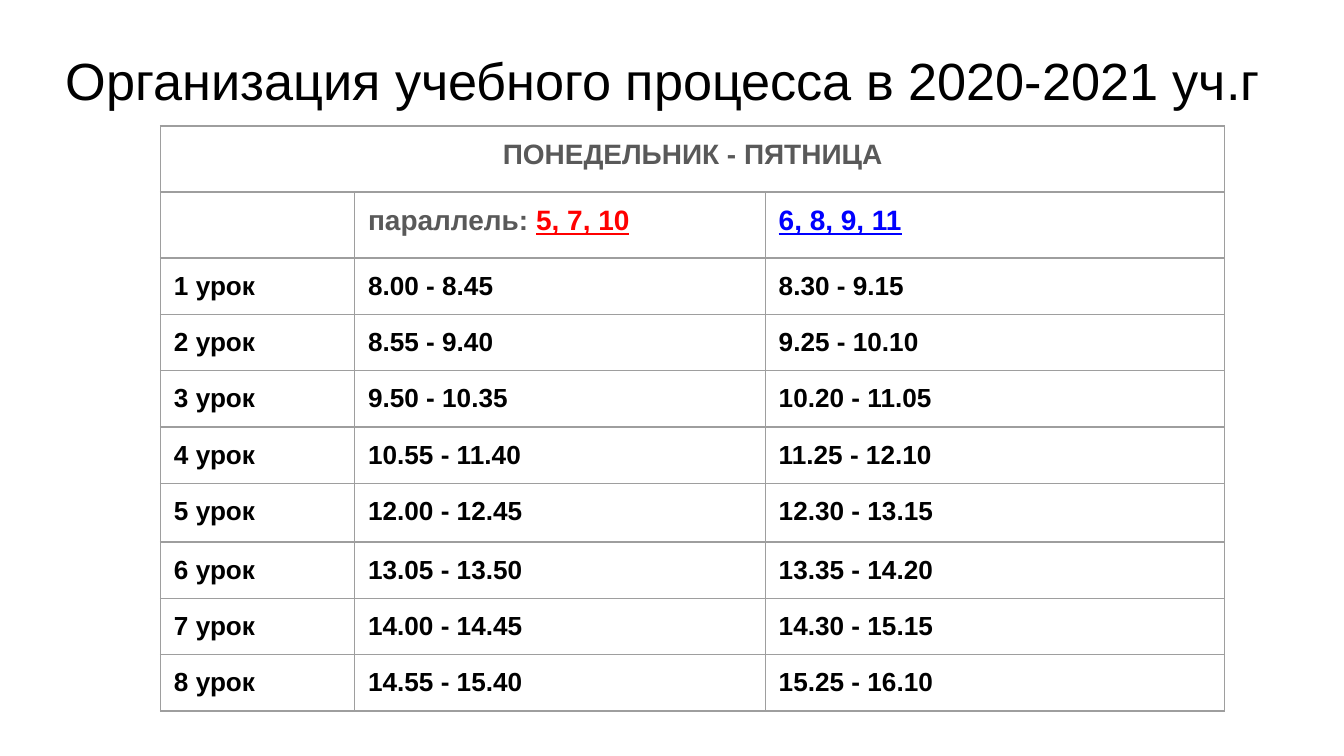
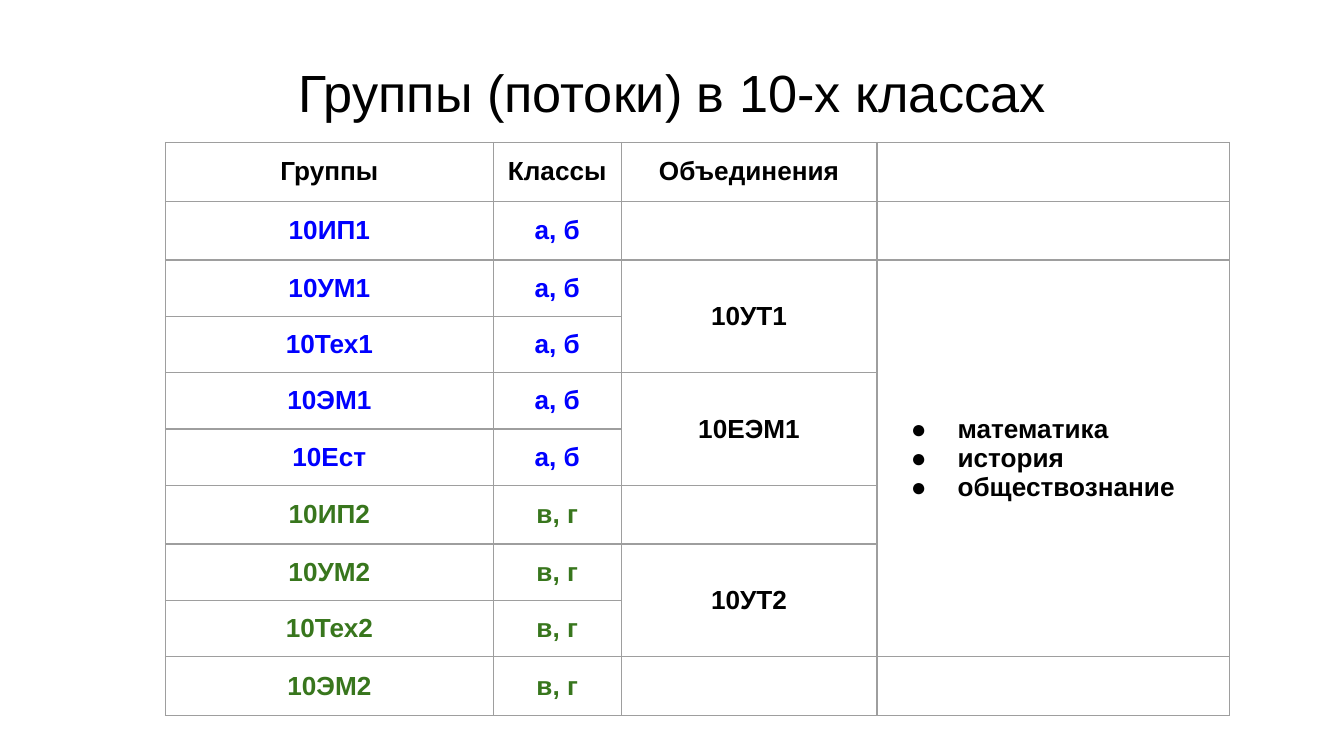
from lxml.etree import SubElement
from pptx import Presentation
from pptx.dml.color import RGBColor
from pptx.enum.text import MSO_ANCHOR as Anchor, MSO_AUTO_SIZE as AutoSize, PP_ALIGN as Align
from pptx.oxml.ns import qn
from pptx.util import Pt

BLACK = RGBColor(0x00, 0x00, 0x00)
GRAY = RGBColor(0x59, 0x59, 0x59)
RED = RGBColor(0xFF, 0x00, 0x00)
BLUE = RGBColor(0x00, 0x00, 0xFF)
GREEN = RGBColor(0x38, 0x76, 0x1D)
BORDER = RGBColor(0x9E, 0x9E, 0x9E)

FONT = "Arial"
INSET = 7.2
ROW_HEIGHT = 30.2
HEAD_HEIGHT = 35.4
TITLE_SIZE = (671, 45.4)
TITLE_FORMAT = {"name": FONT, "size": Pt(28), "bold": False}
CELL_FORMAT = {"name": FONT, "size": Pt(14), "bold": True}
HEAD_FORMAT = {"size": Pt(15)}
LINK_FORMAT = {"size": Pt(15), "underline": True}

LESSONS = [
    ("8.00 - 8.45", "8.30 - 9.15"),
    ("8.55 - 9.40", "9.25 - 10.10"),
    ("9.50 - 10.35", "10.20 - 11.05"),
    ("10.55 - 11.40", "11.25 - 12.10"),
    ("12.00 - 12.45", "12.30 - 13.15"),
    ("13.05 - 13.50", "13.35 - 14.20"),
    ("14.00 - 14.45", "14.30 - 15.15"),
    ("14.55 - 15.40", "15.25 - 16.10"),
]
STREAMS = [
    ("а, б", BLUE, ["10ИП1", "10УМ1", "10Тех1", "10ЭМ1", "10Ест"]),
    ("в, г", GREEN, ["10ИП2", "10УМ2", "10Тех2", "10ЭМ2"]),
]
GROUP_HEADS = ["Группы", "Классы", "Объединения"]
UNIONS = [(2, "10УТ1"), (4, "10ЕЭМ1"), (7, "10УТ2")]
SUBJECTS = ["математика", "история", "обществознание"]
SUBJECT_ROWS = (2, 8)


def apply_format(target, values):
    for name, value in values.items():
        setattr(target, name, value)


def write_span(para, text, color, values):
    span = para.add_run()
    span.text = text
    apply_format(span.font, values)
    span.font.color.rgb = color


def write_cell(cell, text, color=BLACK, align=Align.LEFT, values=None):
    para = cell.text_frame.paragraphs[0]
    para.alignment = align
    write_span(para, text, color, {**CELL_FORMAT, **(values or {})})


def write_bullets(cell, items):
    frame = cell.text_frame
    for index, item in enumerate(items):
        para = frame.add_paragraph() if index else frame.paragraphs[0]
        props = para._p.get_or_add_pPr()
        props.set("marL", str(Pt(36)))
        props.set("indent", str(-Pt(25)))
        bullet_color = SubElement(props, qn("a:buClr"))
        SubElement(bullet_color, qn("a:srgbClr"), val=str(BLACK))
        SubElement(props, qn("a:buFont"), typeface=FONT)
        SubElement(props, qn("a:buChar"), char="●")
        write_span(para, item, BLACK, CELL_FORMAT)


def add_borders(cell):
    props = cell._tc.get_or_add_tcPr()
    for side in ("lnL", "lnR", "lnT", "lnB"):
        line = SubElement(props, qn(f"a:{side}"), w=str(Pt(0.75)))
        fill = SubElement(line, qn("a:solidFill"))
        SubElement(fill, qn("a:srgbClr"), val=str(BORDER))


def add_page(deck, title, left, top, align):
    page = deck.slides.add_slide(deck.slide_layouts[5])
    box = page.shapes.title
    width, height = TITLE_SIZE
    apply_format(box, {"left": Pt(left), "top": Pt(top), "width": Pt(width), "height": Pt(height)})
    margins = {f"margin_{side}": Pt(INSET) for side in ("left", "top", "right", "bottom")}
    apply_format(box.text_frame, {
        **margins, "word_wrap": True, "auto_size": AutoSize.NONE, "vertical_anchor": Anchor.TOP,
    })
    para = box.text_frame.paragraphs[0]
    para.alignment = align
    write_span(para, title, BLACK, TITLE_FORMAT)
    return page


def add_grid(page, left, top, widths, heights, anchor):
    frame = page.shapes.add_table(
        len(heights), len(widths), Pt(left), Pt(top), Pt(sum(widths)), Pt(sum(heights)))
    table = frame.table
    apply_format(table, {"first_row": False, "horz_banding": False})
    for column, width in zip(table.columns, widths):
        column.width = Pt(width)
    for row, height in zip(table.rows, heights):
        row.height = Pt(height)
    margins = {f"margin_{side}": Pt(INSET) for side in ("left", "top", "right", "bottom")}
    for cell in table.iter_cells():
        apply_format(cell, {**margins, "vertical_anchor": anchor})
        add_borders(cell)
        cell.fill.background()
        SubElement(cell.text_frame.paragraphs[0]._p, qn("a:endParaRPr"), sz="1400")
    return table


def build_schedule(deck):
    page = add_page(deck, "Организация учебного процесса в 2020-2021 уч.г", 28, 18.8, Align.LEFT)
    heights = [HEAD_HEIGHT] * 2 + [ROW_HEIGHT] * len(LESSONS)
    heights[6] = 31.4
    table = add_grid(page, 86, 67.5, [104, 220, 246.2], heights, Anchor.TOP)
    table.cell(0, 0).merge(table.cell(0, 2))
    write_cell(table.cell(0, 0), "ПОНЕДЕЛЬНИК - ПЯТНИЦА", GRAY, Align.CENTER, HEAD_FORMAT)
    write_cell(table.cell(1, 1), "параллель: ", GRAY, values=HEAD_FORMAT)
    write_cell(table.cell(1, 1), "5, 7, 10", RED, values=LINK_FORMAT)
    write_cell(table.cell(1, 2), "6, 8, 9, 11", BLUE, values=LINK_FORMAT)
    for number, times in enumerate(LESSONS, 1):
        for column, text in enumerate((f"{number} урок", *times)):
            write_cell(table.cell(number + 1, column), text)


def build_groups(deck):
    page = add_page(deck, "Группы (потоки) в 10-х классах", 24.5, 25.3, Align.CENTER)
    rows = [(group, classes, color) for classes, color, groups in STREAMS for group in groups]
    heights = [ROW_HEIGHT] * (len(rows) + 1)
    table = add_grid(page, 88.6, 76.3, [175.7, 68.5, 137, 188.7], heights, Anchor.MIDDLE)
    for column, head in enumerate(GROUP_HEADS):
        write_cell(table.cell(0, column), head, align=Align.CENTER)
    for row, (group, classes, color) in enumerate(rows, 1):
        write_cell(table.cell(row, 0), group, color, Align.CENTER)
        write_cell(table.cell(row, 1), classes, color, Align.CENTER)
    for row, union in UNIONS:
        table.cell(row, 2).merge(table.cell(row + 1, 2))
        write_cell(table.cell(row, 2), union, align=Align.CENTER)
    first, last = SUBJECT_ROWS
    table.cell(first, 3).merge(table.cell(last, 3))
    write_bullets(table.cell(first, 3), SUBJECTS)


def main():
    deck = Presentation()
    apply_format(deck, {"slide_width": Pt(720), "slide_height": Pt(405)})
    build_schedule(deck)
    build_groups(deck)
    deck.save("out.pptx")


if __name__ == "__main__":
    main()
